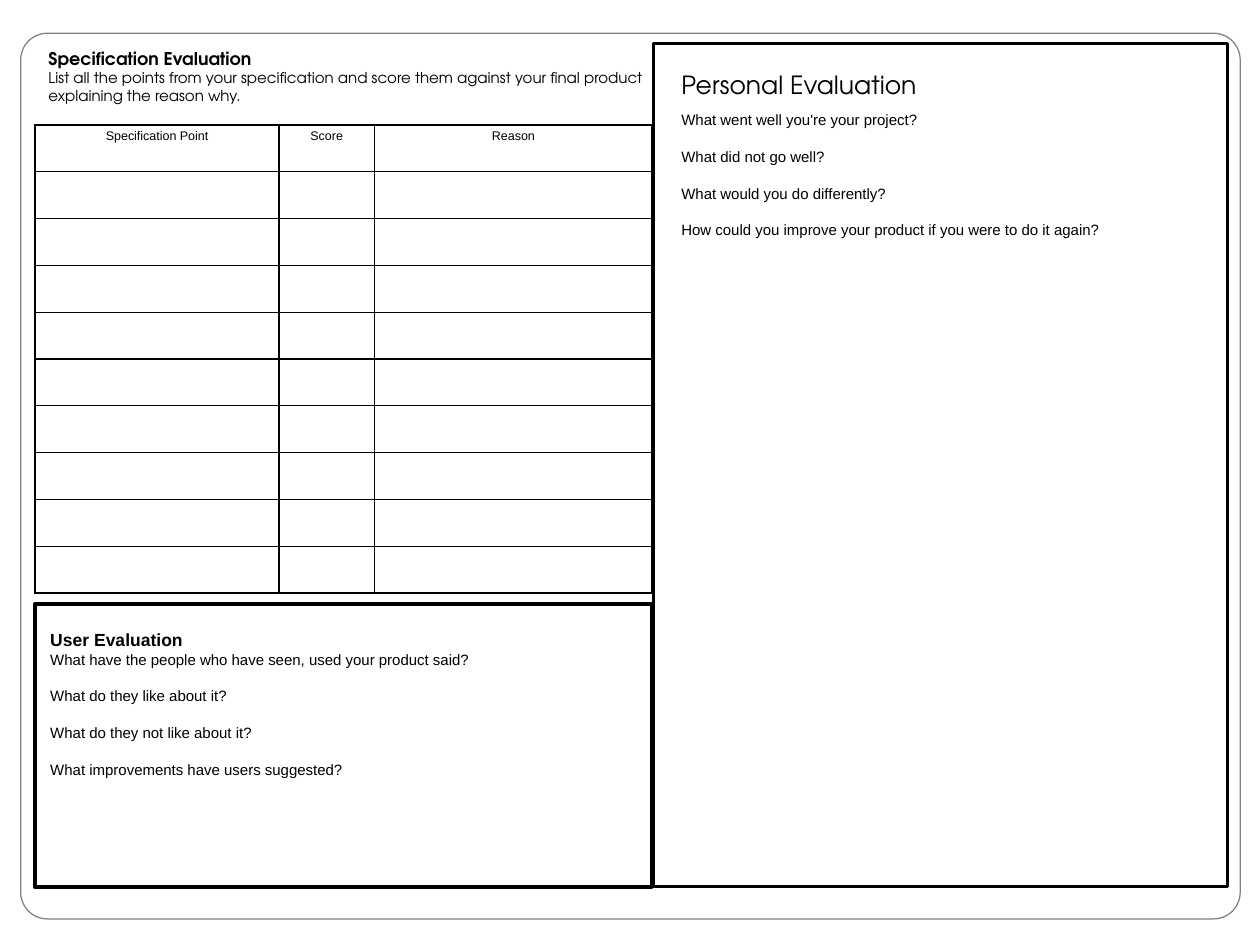
from lxml import etree
from pptx import Presentation
from pptx import util as u
from pptx.dml.color import RGBColor
from pptx.enum import shapes, text
from pptx.oxml import ns

BLACK = RGBColor(0, 0, 0)
GREY = RGBColor(0x80, 0x80, 0x80)
SANS = "Arial"
DISPLAY = "TeX Gyre Adventor"
QUESTION_GAP = 15
THIN, THICK = 1, 2.25
COLUMNS = [("Specification Point", 2.71), ("Score", 1.06), ("Reason", 3.09)]
ROW_COUNT, ROW_HEIGHT = 10, 0.52
USER_QUESTIONS = [
    "What have the people who have seen, used your product said?",
    "What do they like about it?",
    "What do they not like about it?",
    "What improvements have users suggested?",
]
PERSONAL_QUESTIONS = [
    "What went well you're your project?",
    "What did not go well?",
    "What would you do differently?",
    "How could you improve your product if you were to do it again?",
]


def place(shape, left, top, width, height):
    """Move and size a shape, in inches."""
    shape.left, shape.top = u.Inches(left), u.Inches(top)
    shape.width, shape.height = u.Inches(width), u.Inches(height)


def add_frame(slide, kind, box, color, weight):
    """Add an unfilled outline shape."""
    shape = slide.shapes.add_shape(kind, *map(u.Inches, box))
    shape.shadow.inherit = False
    shape.fill.background()
    shape.line.color.rgb = color
    shape.line.width = u.Pt(weight)
    return shape


def write(paragraph, wording, size, font=SANS, bold=False, gap=0):
    """Add one formatted run to a paragraph."""
    paragraph.space_before = u.Pt(gap)
    run = paragraph.add_run()
    run.text = wording
    run.font.size, run.font.name, run.font.bold = u.Pt(size), font, bold
    run.font.color.rgb = BLACK


def prepare(shape):
    """Make a shape's text wrap from the top and return its frame."""
    frame = shape.text_frame
    frame.word_wrap = True
    frame.auto_size = text.MSO_AUTO_SIZE.NONE
    frame.vertical_anchor = text.MSO_ANCHOR.TOP
    return frame


def add_headed_text(slide, box, heading, lines, font):
    """Add a text box with a bold heading over spaced lines."""
    frame = prepare(slide.shapes.add_textbox(*map(u.Inches, box)))
    write(frame.paragraphs[0], heading, 14, font, bold=True)
    for index, line in enumerate(lines):
        write(frame.add_paragraph(), line, 12, font, gap=QUESTION_GAP if index else 0)


def fill_title(title, wording):
    """Place and write the title placeholder."""
    place(title, 7.47, 0.72, 6.14, 0.44)
    paragraph = prepare(title).paragraphs[0]
    paragraph.alignment = text.PP_ALIGN.LEFT
    write(paragraph, wording, 20, DISPLAY)


def fill_body(body, lines):
    """Place the body placeholder and write its lines without bullets."""
    place(body, 7.47, 1.18, 6.14, 1.51)
    frame = prepare(body)
    for index, line in enumerate(lines):
        paragraph = frame.add_paragraph() if index else frame.paragraphs[0]
        write(paragraph, line, 12, gap=QUESTION_GAP if index else 0)
        properties = paragraph._p.get_or_add_pPr()
        properties.set("marL", "0")
        properties.set("indent", "0")
        etree.SubElement(properties, ns.qn("a:buNone"))


def set_borders(cell, weights):
    """Draw black cell borders, given weights by side in L, R, T, B order."""
    properties = cell._tc.get_or_add_tcPr()
    for index, (side, weight) in enumerate(weights.items()):
        line = etree.Element(ns.qn(f"a:ln{side}"), w=str(u.Pt(weight)))
        fill = etree.SubElement(line, ns.qn("a:solidFill"))
        etree.SubElement(fill, ns.qn("a:srgbClr"), val=str(BLACK))
        properties.insert(index, line)


def add_score_table(slide):
    """Add the specification table with a thick outer border."""
    width = sum(column_width for _, column_width in COLUMNS)
    box = (0.39, 1.39, width, ROW_COUNT * ROW_HEIGHT)
    table = slide.shapes.add_table(ROW_COUNT, len(COLUMNS), *map(u.Inches, box)).table
    table.first_row = table.horz_banding = False
    for row in table.rows:
        row.height = u.Inches(ROW_HEIGHT)
    last_row, last_column = ROW_COUNT - 1, len(COLUMNS) - 1
    for column, (heading, column_width) in enumerate(COLUMNS):
        table.columns[column].width = u.Inches(column_width)
        paragraph = table.cell(0, column).text_frame.paragraphs[0]
        paragraph.alignment = text.PP_ALIGN.CENTER
        write(paragraph, heading, 10)
        for row in range(ROW_COUNT):
            cell = table.cell(row, column)
            cell.fill.background()
            outer = {"L": column == 0, "R": column == last_column,
                     "T": row == 0, "B": row == last_row}
            set_borders(cell, {side: THICK if edge else THIN for side, edge in outer.items()})


def main():
    """Build the evaluation slide."""
    presentation = Presentation()
    presentation.slide_width, presentation.slide_height = u.Inches(14), u.Inches(10.5)
    slide = presentation.slides.add_slide(presentation.slide_layouts[1])
    rectangle = shapes.MSO_SHAPE.RECTANGLE
    page = add_frame(slide, shapes.MSO_SHAPE.ROUNDED_RECTANGLE, (0.23, 0.37, 13.55, 9.84), GREY, 1)
    page.adjustments[0] = 0.03
    add_score_table(slide)
    add_headed_text(slide, (0.44, 0.48, 6.93, 0.74), "Specification Evaluation",
                    ["List all the points from your specification and score them "
                     "against your final product explaining the reason why."], DISPLAY)
    add_frame(slide, rectangle, (0.39, 6.71, 6.85, 3.15), BLACK, 3)
    add_headed_text(slide, (0.46, 6.94, 5.51, 1.75), "User Evaluation", USER_QUESTIONS, SANS)
    add_frame(slide, rectangle, (7.26, 0.48, 6.38, 9.37), BLACK, THICK)
    fill_title(slide.shapes.title, "Personal Evaluation")
    fill_body(slide.placeholders[1], PERSONAL_QUESTIONS)
    presentation.save("out.pptx")


if __name__ == "__main__":
    main()
